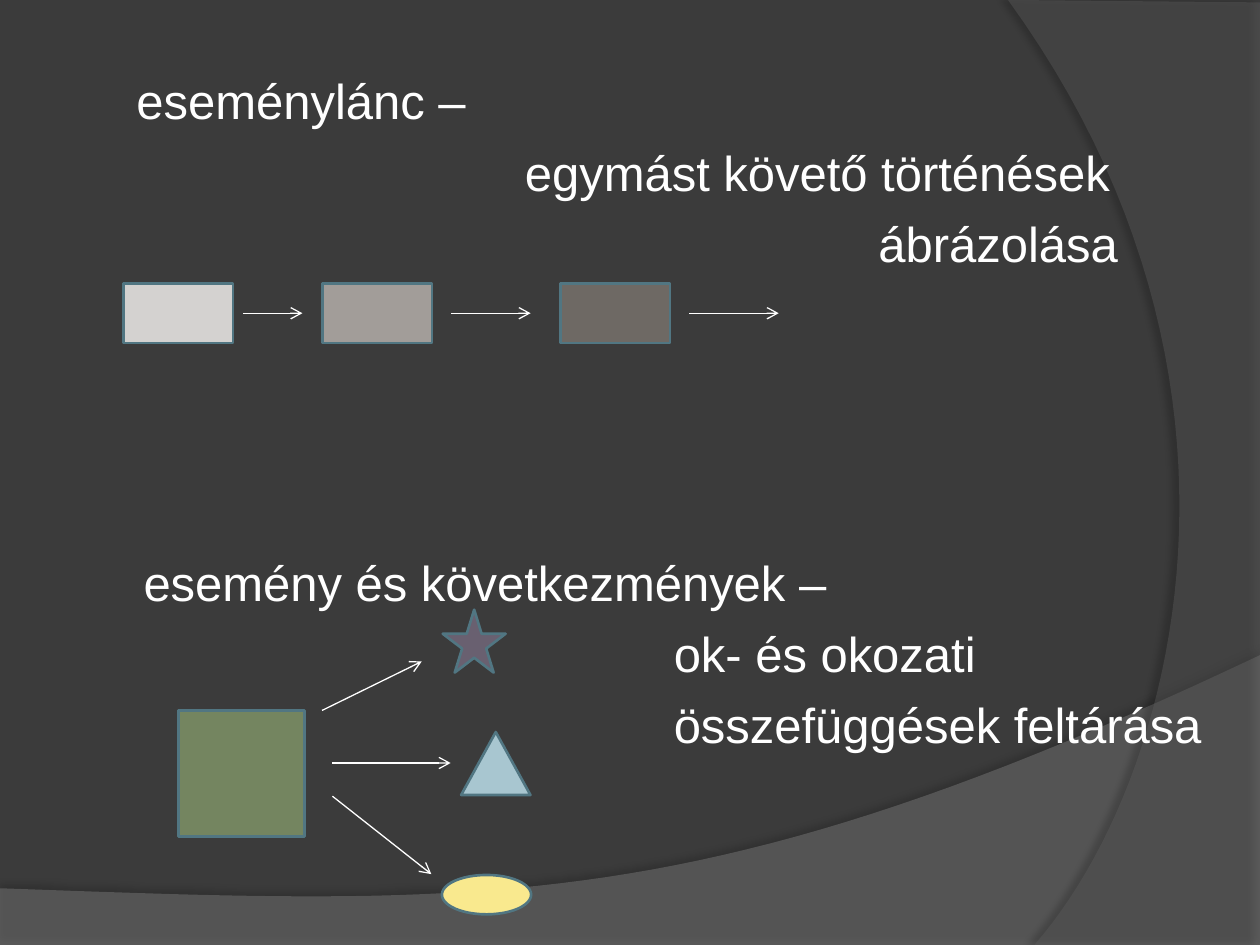
from lxml import etree
from pptx import Presentation
from pptx.dml.color import RGBColor
from pptx.enum.shapes import MSO_CONNECTOR, MSO_SHAPE
from pptx.oxml.ns import qn
from pptx.util import Pt

STRAIGHT = MSO_CONNECTOR.STRAIGHT
RECTANGLE = MSO_SHAPE.RECTANGLE
OVAL = MSO_SHAPE.OVAL
TRIANGLE = MSO_SHAPE.ISOSCELES_TRIANGLE
STAR = MSO_SHAPE.STAR_5_POINT

WIDTH, HEIGHT = 720, 540
FONT = "Arial"
COLORS = {
    "background": "3B3B3B", "wave": "7F7F7F", "side": "5E5E5E",
    "shadow": "000000", "text": "FFFFFF", "outline": "517682",
    "first": "D4D2D0", "second": "A29D99", "third": "6E6964",
    "event": "748560", "star": "696070", "triangle": "A8C6D0",
    "oval": "F9E98E",
}


def color(name):
    return RGBColor.from_string(COLORS[name])


def curve(start, control_1, control_2, end, steps=48):
    """Return points along a cubic Bezier curve, without its start."""
    points = []
    for step in range(1, steps + 1):
        t = step / steps
        weights = ((1 - t) ** 3, 3 * t * (1 - t) ** 2, 3 * t * t * (1 - t), t ** 3)
        anchors = (start, control_1, control_2, end)
        points.append(tuple(sum(weight * anchor[axis] for weight, anchor in zip(weights, anchors))
                            for axis in (0, 1)))
    return points


def add_backdrop(slide, points, fill, opacity, shadow_opacity, distance, direction):
    """Draw a translucent outline with a soft shadow; angles are in degrees."""
    corners = [(Pt(x), Pt(y)) for x, y in points]
    builder = slide.shapes.build_freeform(*corners[0])
    builder.add_line_segments(corners[1:], close=True)
    shape = builder.convert_to_shape()
    shape.fill.solid()
    shape.fill.fore_color.rgb = color(fill)
    shape.line.fill.background()
    properties = shape._element.spPr
    fill_color = properties.find(qn("a:solidFill")).find(qn("a:srgbClr"))
    etree.SubElement(fill_color, qn("a:alpha"), val=str(opacity * 1000))
    effects = etree.SubElement(properties, qn("a:effectLst"))
    shadow = etree.SubElement(effects, qn("a:outerShdw"), blurRad=str(Pt(4)),
                              dist=str(Pt(distance)), dir=str(direction * 60000),
                              algn="ctr", rotWithShape="0")
    shade = etree.SubElement(shadow, qn("a:srgbClr"), val=COLORS["shadow"])
    etree.SubElement(shade, qn("a:alpha"), val=str(shadow_opacity * 1000))


def add_background(slide):
    slide.background.fill.solid()
    slide.background.fill.fore_color.rgb = color("background")
    wave_start = (WIDTH, 374.4)
    wave = [(0, HEIGHT), (WIDTH, HEIGHT), wave_start]
    wave += curve(wave_start, (402.5, 524.9), (281.5, 517.7), (0, 507.6))
    add_backdrop(slide, wave, "wave", 45, 35, 3.5, 270)
    side_start = (591.1, HEIGHT)
    side = [(WIDTH, 1.4), (WIDTH, HEIGHT), side_start]
    side += curve(side_start, (673.2, 445.7), (733, 216), (576, 0))
    add_backdrop(slide, side, "side", 40, 45, 4, 180)


def add_lines(slide, left, top, lines):
    """Write (text, indent) lines, indents measured from the left of the box."""
    box = slide.shapes.add_textbox(Pt(left), Pt(top), Pt(WIDTH - left), Pt(118))
    frame = box.text_frame
    frame.word_wrap = True
    frame.margin_left = frame.margin_right = frame.margin_top = frame.margin_bottom = 0
    frame.text = "\n".join(text for text, _ in lines)
    for para, (_, indent) in zip(frame.paragraphs, lines):
        para._p.get_or_add_pPr().set("marL", str(Pt(indent)))
        para.space_after = Pt(7.2)
        para.font.name = FONT
        para.font.size = Pt(28)
        para.font.color.rgb = color("text")


def add_figure(slide, kind, left, top, width, height, fill):
    shape = slide.shapes.add_shape(kind, Pt(left), Pt(top), Pt(width), Pt(height))
    shape.shadow.inherit = False
    shape.fill.solid()
    shape.fill.fore_color.rgb = color(fill)
    shape.line.color.rgb = color("outline")
    shape.line.width = Pt(1.5)


def add_arrow(slide, start_x, start_y, end_x, end_y):
    arrow = slide.shapes.add_connector(STRAIGHT, Pt(start_x), Pt(start_y), Pt(end_x), Pt(end_y))
    arrow.line.color.rgb = color("text")
    arrow.line.width = Pt(0.75)
    etree.SubElement(arrow.line._get_or_add_ln(), qn("a:tailEnd"), type="arrow")
    etree.SubElement(arrow._element.spPr, qn("a:effectLst"))


def add_event_chain(slide, left, top):
    width, height = 62.6, 34
    steps = [("first", 0, 68.4, 102.2), ("second", 113.7, 187.2, 232.6),
             ("third", 249.8, 323.3, 374.4)]
    for fill, offset, arrow_start, arrow_end in steps:
        add_figure(slide, RECTANGLE, left + offset, top, width, height, fill)
        middle = top + height / 2
        add_arrow(slide, left + arrow_start, middle, left + arrow_end, middle)


def add_consequences(slide, left, top):
    """Draw an event with arrows fanning out to its three outcomes."""
    add_figure(slide, RECTANGLE, left, top, 72, 72, "event")
    for start_x, start_y, end_x, end_y in [
            (82, 0, 139, -28), (88, 30, 155.5, 30), (88, 49, 144.5, 93.5)]:
        add_arrow(slide, left + start_x, top + start_y, left + end_x, top + end_y)
    for kind, x, y, width, height, fill in [
            (OVAL, 150.5, 94, 51, 22.5, "oval"),
            (TRIANGLE, 161.5, 12.3, 39.6, 36, "triangle"),
            (STAR, 151, -57.6, 36, 36, "star")]:
        add_figure(slide, kind, left + x, top + y, width, height, fill)


def main():
    deck = Presentation()
    deck.slide_width, deck.slide_height = Pt(WIDTH), Pt(HEIGHT)
    slide = deck.slides.add_slide(deck.slide_layouts[6])
    add_background(slide)
    add_lines(slide, 78, 40.5, [("eseménylánc –", 0), ("egymást követő történések", 222),
                                ("ábrázolása", 424)])
    add_lines(slide, 82, 315.5, [("esemény és következmények –", 0), ("ok- és okozati", 303),
                                 ("összefüggések feltárása", 303)])
    add_event_chain(slide, 70.6, 162)
    add_consequences(slide, 102, 406)
    deck.save("out.pptx")


if __name__ == "__main__":
    main()
